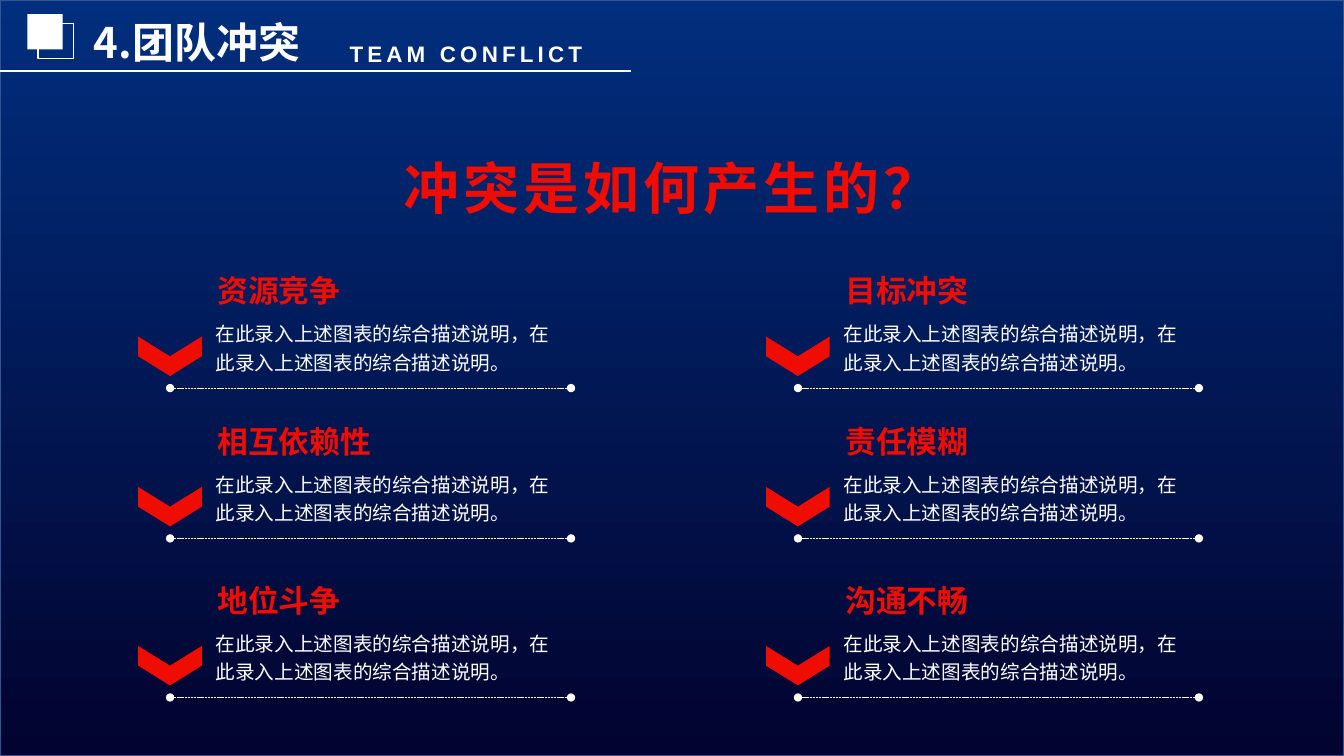
import dataclasses

import lxml.etree
import pptx
import pptx.dml.color
import pptx.enum.dml
import pptx.enum.shapes
import pptx.enum.text
import pptx.oxml.ns
import pptx.util

Pt = pptx.util.Pt
qn = pptx.oxml.ns.qn
SHAPE = pptx.enum.shapes.MSO_SHAPE
ALIGN = pptx.enum.text.PP_ALIGN


@dataclasses.dataclass(frozen=True)
class Theme:
    white: str = "FFFFFF"
    red: str = "EF0C00"
    sky: str = "012E7D"
    night: str = "02032F"
    border: str = "325491"
    latin: str = "Arial"
    chinese: str = "Noto Sans CJK SC"
    question_size: int = 40
    title_size: int = 30
    heading_size: int = 22
    subtitle_size: int = 16
    body_size: int = 14


THEME = Theme()
DESCRIPTION = "在此录入上述图表的综合描述说明，在此录入上述图表的综合描述说明。"
CAUSES = [
    ["资源竞争", "相互依赖性", "地位斗争"],
    ["目标冲突", "责任模糊", "沟通不畅"],
]
COLUMN_LEFTS = [107.3, 555.8]
ROW_TOPS = [190.8, 298.2, 411.8]


def rgb(value):
    return pptx.dml.color.RGBColor.from_string(value)


def place(item, left, top, width, height):
    item.left, item.top = Pt(left), Pt(top)
    item.width, item.height = Pt(width), Pt(height)


def write(holder, text, size, color, bold=True, font=THEME.latin, spacing=0,
          wrap=True, align=ALIGN.LEFT, line_spacing=None):
    frame = holder.text_frame
    frame.text = text
    frame.word_wrap = wrap
    frame.auto_size = pptx.enum.text.MSO_AUTO_SIZE.SHAPE_TO_FIT_TEXT
    frame.vertical_anchor = pptx.enum.text.MSO_ANCHOR.TOP
    paragraph = frame.paragraphs[0]
    paragraph.alignment = align
    if line_spacing:
        paragraph.line_spacing = line_spacing
    run = paragraph.runs[0]
    run.font.name = font
    run.font.size = Pt(size)
    run.font.bold = bold
    run.font.color.rgb = rgb(color)
    properties = run.font._element
    lxml.etree.SubElement(properties, qn("a:ea"), typeface=THEME.chinese)
    if spacing:
        properties.set("spc", str(spacing * 100))


def add_text(slide, box, text, size, color, **style):
    holder = slide.shapes.add_textbox(*map(Pt, box))
    write(holder, text, size, color, **style)


def add_figure(slide, preset, box, fill=None, border=None):
    figure = slide.shapes.add_shape(preset, *map(Pt, box))
    figure.shadow.inherit = False
    if fill:
        figure.fill.solid()
        figure.fill.fore_color.rgb = rgb(fill)
    else:
        figure.fill.background()
    if border:
        figure.line.color.rgb = rgb(border)
        figure.line.width = Pt(1)
    else:
        figure.line.fill.background()
    return figure


def add_rule(slide, left, top, length, weight):
    rule = slide.shapes.add_connector(
        pptx.enum.shapes.MSO_CONNECTOR.STRAIGHT,
        Pt(left), Pt(top), Pt(left + length), Pt(top))
    rule.line.color.rgb = rgb(THEME.white)
    rule.line.width = Pt(weight)
    lxml.etree.SubElement(rule._element.spPr, qn("a:effectLst"))
    return rule


def add_backdrop(slide, width, height):
    backdrop = add_figure(slide, SHAPE.RECTANGLE, (0, 0, width, height),
                          border=THEME.border)
    backdrop.fill.gradient()
    backdrop.fill.gradient_angle = 270
    for stop, color in zip(backdrop.fill.gradient_stops, (THEME.sky, THEME.night)):
        stop.color.rgb = rgb(color)
    backdrop._element.getparent().insert(2, backdrop._element)


def add_header(slide, left, top, width, height):
    title = slide.shapes.title
    place(title, left + 59.8, top + 7.9, 192.2, 43.9)
    write(title, "4.团队冲突", THEME.title_size, THEME.white, font=THEME.chinese)
    add_text(slide, (left + 242.6, top + 25.2, 208.1, 26.6), "TEAM CONFLICT",
             THEME.subtitle_size, THEME.white, spacing=3)
    add_rule(slide, left, top + height, width, 1.5)
    add_figure(slide, SHAPE.RECTANGLE, (left + 19.6, top + 10.1, 25.2, 25.2),
               fill=THEME.white)
    add_figure(slide, SHAPE.RECTANGLE, (left + 27.2, top + 16.6, 25.2, 25.2),
               border=THEME.white)


def add_cause(slide, left, top, heading):
    chevron = add_figure(slide, SHAPE.CHEVRON, (left, top + 41, 28.2, 45.4),
                         fill=THEME.red)
    chevron.rotation = 90
    underline = add_rule(slide, left + 14.2, top + 86.4, 286.4, 0.5)
    underline.line.dash_style = pptx.enum.dml.MSO_LINE.SQUARE_DOT
    for end in ("a:headEnd", "a:tailEnd"):
        lxml.etree.SubElement(underline.line._ln, qn(end), type="oval")
    heading_width = len(heading) * THEME.heading_size + 15.4
    add_text(slide, (left + 41, top, heading_width, 33.8), heading,
             THEME.heading_size, THEME.red, wrap=False)
    add_text(slide, (left + 39.6, top + 32.6, 260.6, 48.2), DESCRIPTION,
             THEME.body_size, THEME.white, bold=False, line_spacing=1.2)


def add_causes_slide(deck):
    slide = deck.slides.add_slide(deck.slide_layouts[5])
    add_backdrop(slide, 960, 540)
    add_header(slide, 0, 0, 450.7, 50.4)
    for left, headings in zip(COLUMN_LEFTS, CAUSES):
        for top, heading in zip(ROW_TOPS, headings):
            add_cause(slide, left, top, heading)
    add_text(slide, (277.2, 105.8, 405.4, 55.4), "冲突是如何产生的？",
             THEME.question_size, THEME.red, spacing=3, wrap=False,
             align=ALIGN.CENTER)


def main():
    deck = pptx.Presentation()
    deck.slide_width, deck.slide_height = Pt(960), Pt(540)
    add_causes_slide(deck)
    deck.save("out.pptx")


if __name__ == "__main__":
    main()
